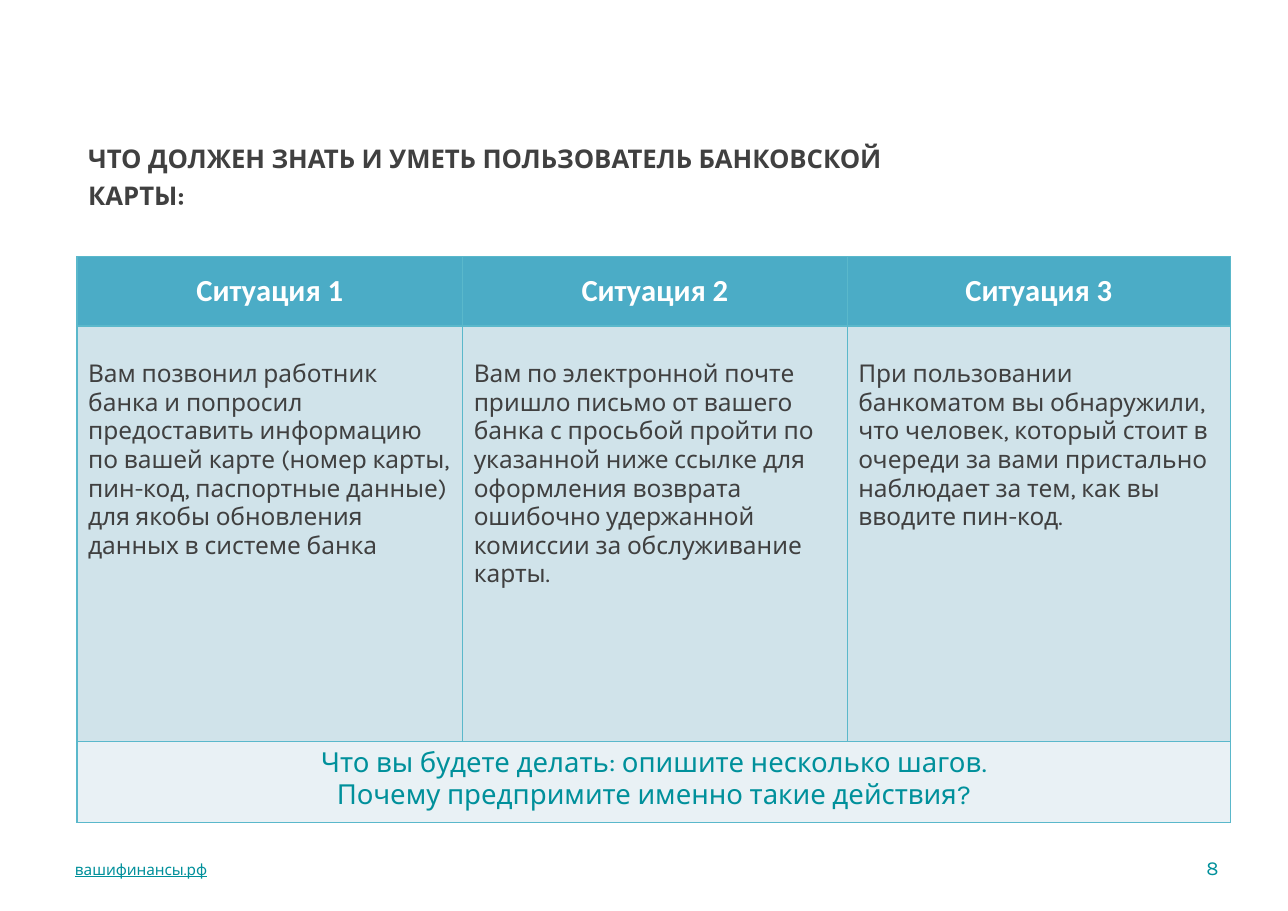
from lxml import etree
from pptx import Presentation
from pptx import util as u
from pptx.dml.color import RGBColor
from pptx.enum import text as t
from pptx.oxml.ns import qn

PX = 9144  # 100 px to the inch
HUES = {"teal": "00909B", "grey": "404040", "white": "FFFFFF", "head": "4BACC6",
        "body": "D0E3EA", "foot": "E9F1F5", "edge": "5AB8CB"}
LEFT, MID, RIGHT = t.PP_ALIGN.LEFT, t.PP_ALIGN.CENTER, t.PP_ALIGN.RIGHT


def write(frame, lines, size, hue, align=LEFT, face="Karla", bold=False, line=False, gap=0):
    frame.word_wrap = True
    for i, words in enumerate(lines):
        para = frame.paragraphs[0] if i == 0 else frame.add_paragraph()
        para.alignment = align
        if i:
            para.space_before = u.Pt(gap)
        run = para.add_run()
        run.text = words
        font = run.font
        font.name, font.size, font.bold, font.underline = face, u.Pt(size), bold, line
        font.color.rgb = RGBColor.from_string(HUES[hue])


def paint(cell, hue):
    cell.fill.solid()
    cell.fill.fore_color.rgb = RGBColor.from_string(HUES[hue])
    props = cell._tc.get_or_add_tcPr()
    for i, side in enumerate(("lnL", "lnR", "lnT", "lnB")):
        edge = etree.Element(qn("a:" + side), w=str(u.Pt(1)))
        fill = etree.SubElement(edge, qn("a:solidFill"))
        etree.SubElement(fill, qn("a:srgbClr"), val=HUES["edge"])
        props.insert(i, edge)


deck = Presentation()
deck.slide_width, deck.slide_height = 1169 * PX, 827 * PX
slide = deck.slides.add_slide(deck.slide_layouts[5])

# Title
title = slide.shapes.title
title.left, title.top, title.width, title.height = [n * PX for n in (70, 125, 960, 62)]
title.text_frame.auto_size = t.MSO_AUTO_SIZE.NONE
title.text_frame.vertical_anchor = t.MSO_ANCHOR.TOP
write(title.text_frame, ["ЧТО ДОЛЖЕН ЗНАТЬ И УМЕТЬ ПОЛЬЗОВАТЕЛЬ БАНКОВСКОЙ", "КАРТЫ:"],
      16.8, "grey", bold=True, gap=3.4)

# Table of situations
cases = [
    "Вам позвонил работник банка и попросил предоставить информацию по вашей карте "
    "(номер карты, пин-код, паспортные данные) для якобы обновления данных в системе банка",
    "Вам по электронной почте пришло письмо от вашего банка с просьбой пройти по указанной "
    "ниже ссылке для оформления возврата ошибочно удержанной комиссии за обслуживание карты.",
    "При пользовании банкоматом вы обнаружили, что человек, который стоит в очереди за вами "
    "пристально наблюдает за тем, как вы вводите пин-код.",
]
grid = slide.shapes.add_table(3, 3, *[n * PX for n in (70, 233, 1047, 514)]).table
grid.first_row = grid.horz_banding = False
for col, wide in zip(grid.columns, (350, 349, 348)):
    col.width = wide * PX
for row, high, hue in zip(grid.rows, (63, 377, 74), ("head", "body", "foot")):
    row.height = high * PX
    for cell in row.cells:
        paint(cell, hue)

for i, case in enumerate(cases):
    head, body = grid.cell(0, i), grid.cell(1, i)
    head.vertical_anchor = t.MSO_ANCHOR.MIDDLE
    write(head.text_frame, [f"Ситуация {i + 1}"], 20, "white", MID, "Calibri", True)
    body.margin_top = 31 * PX
    write(body.text_frame, [case], 16, "grey")

# Question across the last row
task = grid.cell(2, 0)
task.merge(grid.cell(2, 2))
write(task.text_frame, ["Что вы будете делать: опишите несколько шагов.",
                        "Почему предпримите именно такие действия?"], 18, "teal", MID)

# Footer: site and page number
for spot, words, size, align, line in (
        ((57, 767, 397, 44), "вашифинансы.рф", 10, LEFT, True),
        ((1030, 766, 87, 44), "8", 13, RIGHT, False)):
    frame = slide.shapes.add_textbox(*[n * PX for n in spot]).text_frame
    frame.vertical_anchor = t.MSO_ANCHOR.MIDDLE
    frame.margin_left = frame.margin_right = 11 * PX
    write(frame, [words], size, "teal", align, line=line)

deck.save("out.pptx")
